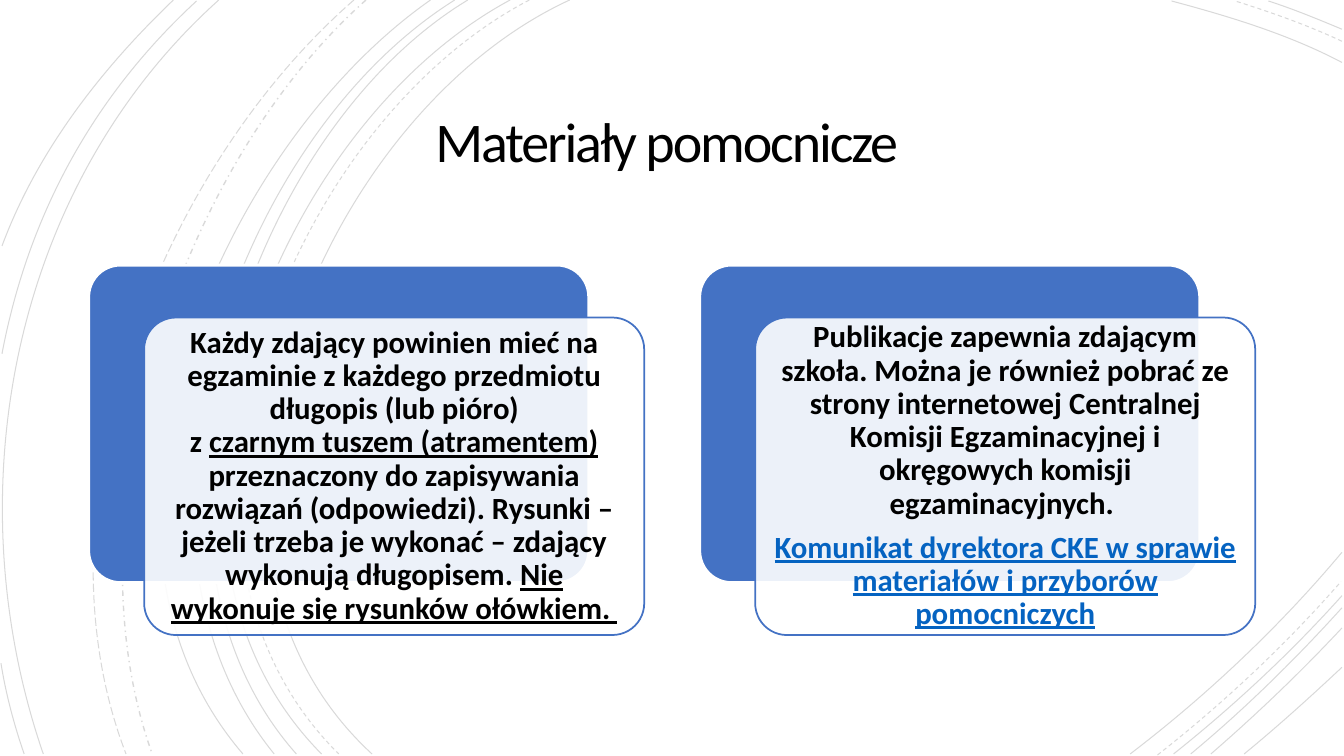
from pptx import Presentation
from pptx.dml.color import RGBColor
from pptx.enum.dml import MSO_LINE
from pptx.enum.shapes import MSO_SHAPE
from pptx.enum.text import MSO_ANCHOR, PP_ALIGN
from pptx.oxml.ns import qn
from pptx.util import Inches, Pt
from lxml import etree

RECT, ROUND = MSO_SHAPE.RECTANGLE, MSO_SHAPE.ROUNDED_RECTANGLE
MIDDLE = MSO_ANCHOR.MIDDLE
CENTER = PP_ALIGN.CENTER
SOLID, DASH = MSO_LINE.SOLID, MSO_LINE.DASH
DASH_DOT, LONG = MSO_LINE.DASH_DOT, MSO_LINE.LONG_DASH

BLACK = RGBColor(0, 0, 0)
WHITE = RGBColor(0xFF, 0xFF, 0xFF)
BLUE = RGBColor(0x44, 0x72, 0xC4)
LINK = RGBColor(0x05, 0x63, 0xC1)
FONT = "Calibri"
WIDE, HIGH = 13.33, 7.5

ARCS = [
    (SOLID, (5.65, 0), (3.15, 1.15), (1.43, 5.4), (3.69, 7.48)),
    (SOLID, (13.31, 0.62), (12.78, 0.34), (12.18, 0.16), (11.62, 0.01)),
    (SOLID, (11.21, 7.48), (11.97, 6.9), (12.69, 6.22), (13.31, 5.48)),
    (DASH, (5.25, 0), (2.85, 1.25), (1.23, 5.37), (3.36, 7.48)),
    (DASH, (13.31, 0.41), (12.97, 0.25), (12.6, 0.12), (12.25, 0.01)),
    (DASH, (11.48, 7.49), (12.13, 6.98), (12.75, 6.4), (13.3, 5.77)),
    (SOLID, (5.06, 0), (2.7, 1.27), (1.1, 5.37), (3.19, 7.48)),
    (SOLID, (13.31, 0.29), (13.07, 0.19), (12.83, 0.09), (12.58, 0.01)),
    (SOLID, (11.64, 7.48), (12.23, 7.01), (12.8, 6.48), (13.31, 5.91)),
    (SOLID, (4.64, 0), (2.44, 1.33), (1.1, 5.41), (2.94, 7.48)),
    (SOLID, (11.81, 7.48), (12.34, 7.04), (12.84, 6.55), (13.31, 6.03)),
    (SOLID, (4.51, 0), (2.31, 1.38), (0.97, 5.33), (2.72, 7.48)),
    (SOLID, (12.01, 7.48), (12.46, 7.09), (12.9, 6.67), (13.31, 6.23)),
    (SOLID, (4.27, 0), (2.17, 1.47), (0.53, 5.29), (2.41, 7.48)),
    (SOLID, (12.34, 7.48), (12.67, 7.21), (12.99, 6.92), (13.31, 6.62)),
    (DASH_DOT, (3.63, 0), (1.76, 1.66), (0.65, 5.09), (1.51, 7.48)),
    (LONG, (3.51, 0), (1.57, 1.69), (0.29, 4.99), (1.25, 7.48)),
    (SOLID, (2.17, 0), (0.11, 1.85), (-0.46, 4.9), (0.43, 7.48)),
    (SOLID, (1.95, 0.01), (0.92, 0.96), (0.28, 2.14), (0.02, 3.51)),
    (SOLID, (0.01, 6.58), (0.06, 6.89), (0.14, 7.19), (0.24, 7.48)),
    (SOLID, (1.72, 0), (1, 0.69), (0.37, 1.5), (0.02, 2.44)),
]

PENS = [[
    ("Każdy zdający powinien mieć na egzaminie z każdego przedmiotu "
     "długopis (lub pióro)\nz ", False),
    ("czarnym tuszem (atramentem) ", True),
    ("przeznaczony do zapisywania rozwiązań (odpowiedzi). Rysunki – jeżeli "
     "trzeba je wykonać – zdający wykonują długopisem. ", False),
    ("Nie wykonuje się rysunków ołówkiem. ", True),
]]
BOOKS = [
    [("Publikacje zapewnia zdającym szkoła. Można je również pobrać ze strony "
      "internetowej Centralnej Komisji Egzaminacyjnej i okręgowych komisji "
      "egzaminacyjnych. ", False)],
    [("Komunikat dyrektora CKE w sprawie materiałów i przyborów "
      "pomocniczych", True)],
]


def fade(part, share):
    color = part.find(".//" + qn("a:srgbClr"))
    etree.SubElement(color, qn("a:alpha")).set("val", str(share * 1000))


def bend(arc):
    lines = list(arc._element.iter(qn("a:lnTo")))
    curve = etree.SubElement(lines[0].getparent(), qn("a:cubicBezTo"))
    for line in lines:
        curve.append(line[0])
        line.getparent().remove(line)


def add_back(slide, x, y, w, h):
    back = slide.shapes.add_shape(RECT, Inches(x), Inches(y), Inches(w), Inches(h))
    back.shadow.inherit = False
    back.fill.solid()
    back.fill.fore_color.rgb = WHITE
    back.line.fill.background()
    for dash, *ends in ARCS:
        dots = [(Inches(x + px), Inches(y + py)) for px, py in ends]
        pen = slide.shapes.build_freeform(*dots[0])
        pen.add_line_segments(dots[1:], close=False)
        arc = pen.convert_to_shape()
        bend(arc)
        arc.shadow.inherit = False
        arc.fill.background()
        arc.line.color.rgb = BLACK
        arc.line.width = Pt(1 if dash == DASH_DOT else 0.75)
        arc.line.dash_style = dash
        fade(arc.line._get_or_add_ln(), 15)


def set_margins(frame, gap):
    frame.margin_left = frame.margin_right = Inches(gap)
    frame.margin_top = frame.margin_bottom = Inches(gap)
    frame.vertical_anchor = MIDDLE
    frame.word_wrap = True


def add_title(slide, x, y, w, h):
    box = slide.shapes.add_textbox(Inches(x), Inches(y), Inches(w), Inches(h))
    set_margins(box.text_frame, 0.25)
    para = box.text_frame.paragraphs[0]
    run = para.add_run()
    run.text = "Materiały pomocnicze "
    run._r.get_or_add_rPr().set("spc", "-150")
    para.alignment = CENTER
    para.line_spacing = 0.85
    para.font.name, para.font.size = FONT, Pt(40)
    para.font.color.rgb = BLACK


def add_panel(slide, x, y, w, h, fill, line, width):
    panel = slide.shapes.add_shape(ROUND, Inches(x), Inches(y), Inches(w), Inches(h))
    panel.adjustments[0] = 0.1
    panel.shadow.inherit = False
    panel.fill.solid()
    panel.fill.fore_color.rgb = fill
    panel.line.color.rgb = line
    panel.line.width = Pt(width)
    return panel


def add_runs(para, parts):
    for text, under in parts:
        for i, line in enumerate(text.split("\n")):
            if i:
                para.add_line_break()
            run = para.add_run()
            run.text = line
            if under:
                run.font.underline = True


def add_card(slide, x, y, w, h, paras):
    add_panel(slide, x, y, w, h, BLUE, WHITE, 2)
    front = add_panel(slide, x + 0.55, y + 0.52, w, h, WHITE, BLUE, 1.25)
    fade(front._element.spPr.find(qn("a:solidFill")), 90)
    frame = front.text_frame
    set_margins(frame, 0.09)
    for i, parts in enumerate(paras):
        para = frame.add_paragraph() if i else frame.paragraphs[0]
        add_runs(para, parts)
        para.alignment = CENTER
        para.line_spacing = 0.9
        para.space_after = Pt(7.7 if i < len(paras) - 1 else 0)
        para.font.name, para.font.size = FONT, Pt(22)
        para.font.bold = True
        para.font.color.rgb = LINK if i else BLACK


def main():
    deck = Presentation()
    deck.slide_width, deck.slide_height = Inches(WIDE), Inches(HIGH)
    slide = deck.slides.add_slide(deck.slide_layouts[6])
    add_back(slide, 0, 0, WIDE, HIGH)
    add_title(slide, 1.92, 0.87, 9.49, 1.15)
    for i, paras in enumerate([PENS, BOOKS]):
        add_card(slide, 0.88 + i * 6.06, 2.63, 4.96, 3.15, paras)
    deck.save("out.pptx")


if __name__ == "__main__":
    main()
